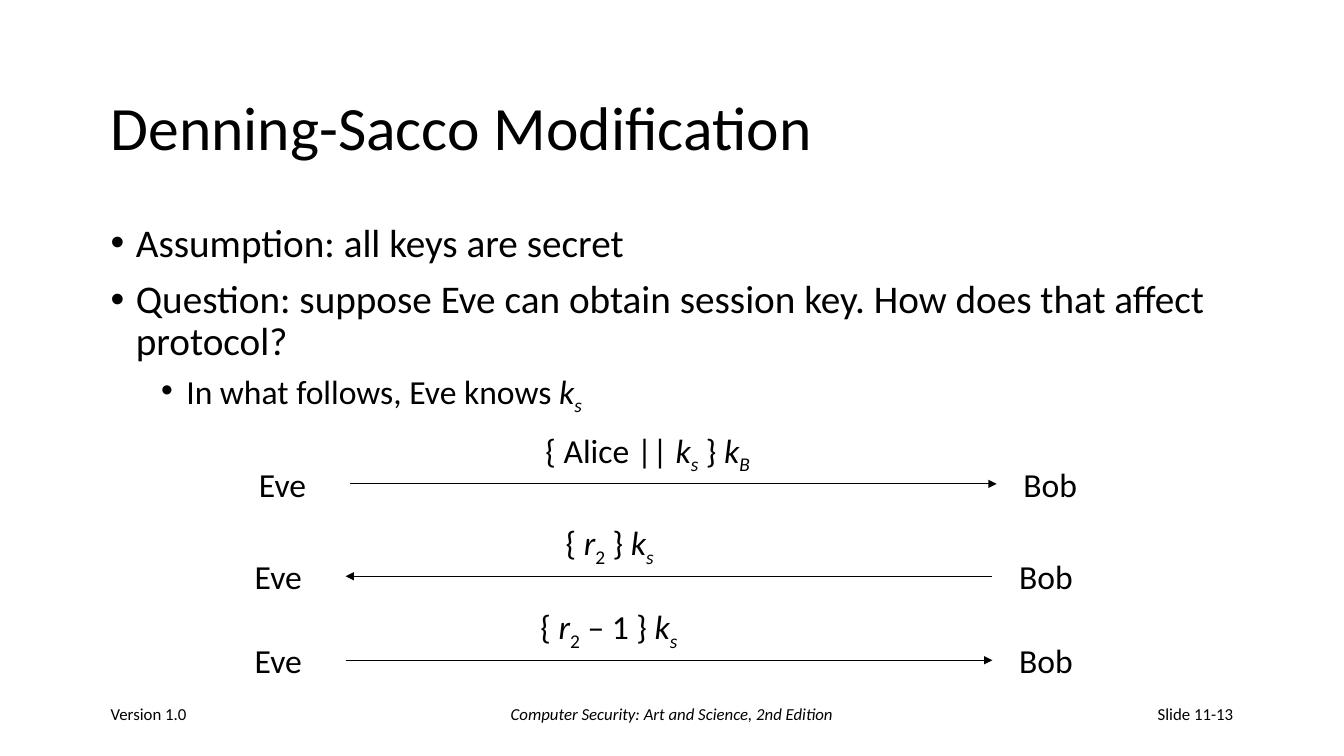
from dataclasses import dataclass

from lxml.etree import SubElement
from pptx import Presentation
from pptx.dml.color import RGBColor
from pptx.enum.shapes import MSO_CONNECTOR
from pptx.enum.text import MSO_ANCHOR, PP_ALIGN
from pptx.oxml.ns import qn
from pptx.util import Inches, Pt

COLS, ROWS = 160, 90
CELL = Inches(1 / 12)
LEFT, WIDTH = 12, 136
LINE_WIDTH = 77


@dataclass(frozen=True)
class Theme:
    font: str = "Calibri"
    ink: RGBColor = RGBColor(0, 0, 0)
    title: int = 44
    body: int = 28
    label: int = 24
    footer: int = 12
    rule: float = 0.75


THEME = Theme()
K_S = [("k", "i"), ("s", "i_")]
K_B = [("k", "i"), ("B", "i_")]
R_2 = [("r", "i"), ("2", "_")]


def grid(*cells):
    return [round(c * CELL) for c in cells]


def write(p, parts, size):
    """Add (text, style) runs; in a style, i is italic and _ is subscript."""
    for text, style in parts:
        r = p.add_run()
        r.text = text
        r.font.name = THEME.font
        r.font.size = Pt(size)
        r.font.color.rgb = THEME.ink
        r.font.italic = "i" in style
        if "_" in style:
            r.font._element.set("baseline", "-25000")


def add_box(slide, left, top, width, height, wrap=True, anchor=MSO_ANCHOR.TOP):
    tf = slide.shapes.add_textbox(*grid(left, top, width, height)).text_frame
    tf.word_wrap = wrap
    tf.vertical_anchor = anchor
    return tf


def add_title(slide, text):
    p = add_box(slide, LEFT, 8, WIDTH, 15, anchor=MSO_ANCHOR.MIDDLE).paragraphs[0]
    p.line_spacing = 0.9
    write(p, [(text, "")], THEME.title)


def add_bullets(slide, items):
    tf = add_box(slide, LEFT, 26, WIDTH, 26)
    for i, (level, parts) in enumerate(items):
        p = tf.add_paragraph() if i else tf.paragraphs[0]
        p.level = level
        pPr = p._p.get_or_add_pPr()
        pPr.set("marL", str(Inches(0.25 + 0.5 * level)))
        pPr.set("indent", str(-Inches(0.25)))
        SubElement(pPr, qn("a:buFont"), typeface="Arial")
        SubElement(pPr, qn("a:buChar"), char="•")
        p.line_spacing = 0.9
        if i:
            p.space_before = Pt(5 if level else 10)
        write(p, parts, THEME.label if level else THEME.body)


def add_label(slide, left, top, width, parts):
    tf = add_box(slide, left, top, width, 6, wrap=False)
    write(tf.paragraphs[0], parts, THEME.label)


def add_arrow(slide, left, row, end):
    """Draw a message line; end is headEnd (points left) or tailEnd (right)."""
    line = slide.shapes.add_connector(
        MSO_CONNECTOR.STRAIGHT, *grid(left, row, left + LINE_WIDTH, row))
    line.line.color.rgb = THEME.ink
    line.line.width = Pt(THEME.rule)
    SubElement(line.line._get_or_add_ln(), qn(f"a:{end}"), type="triangle")
    SubElement(line._element.spPr, qn("a:effectLst"))


def add_message(slide, left, row, end, offset, width, parts):
    """Draw Eve, Bob, the arrow between them and the message above it."""
    add_label(slide, left - 12, row - 3, 8.2, [("Eve", "")])
    add_arrow(slide, left, row, end)
    add_label(slide, left + LINE_WIDTH + 2, row - 3, 8.9, [("Bob", "")])
    add_label(slide, left + offset, row - 7, width, parts)


def add_footer(slide, left, width, text, align, style=""):
    p = add_box(slide, left, 82, width, 6, anchor=MSO_ANCHOR.MIDDLE).paragraphs[0]
    p.alignment = align
    write(p, [(text, style)], THEME.footer)


def main():
    prs = Presentation()
    prs.slide_width, prs.slide_height = grid(COLS, ROWS)
    slide = prs.slides.add_slide(prs.slide_layouts[6])

    add_title(slide, "Denning-Sacco Modification")
    add_bullets(slide, [
        (0, [("Assumption: all keys are secret", "")]),
        (0, [("Question: suppose Eve can obtain session key. "
              "How does that affect protocol?", "")]),
        (1, [("In what follows, Eve knows ", ""), *K_S]),
    ])

    messages = [
        (41.65, 57.6, "tailEnd", 22.1, 27.2,
         [("{ Alice || ", ""), *K_S, (" } ", ""), *K_B]),
        (41.15, 68.6, "headEnd", 25, 13.3,
         [("{ ", ""), *R_2, (" } ", ""), *K_S]),
        (41.15, 78.6, "tailEnd", 22, 19.1,
         [("{ ", ""), *R_2, (" – 1 } ", ""), *K_S]),
    ]
    for message in messages:
        add_message(slide, *message)

    side, middle = 33.4, 50.6
    add_footer(slide, LEFT, side, "Version 1.0", PP_ALIGN.LEFT)
    add_footer(slide, (COLS - middle) / 2, middle,
               "Computer Security: Art and Science, 2nd Edition",
               PP_ALIGN.CENTER, "i")
    add_footer(slide, LEFT + WIDTH - side, side, "Slide 11-13", PP_ALIGN.RIGHT)

    prs.save("out.pptx")


if __name__ == "__main__":
    main()
